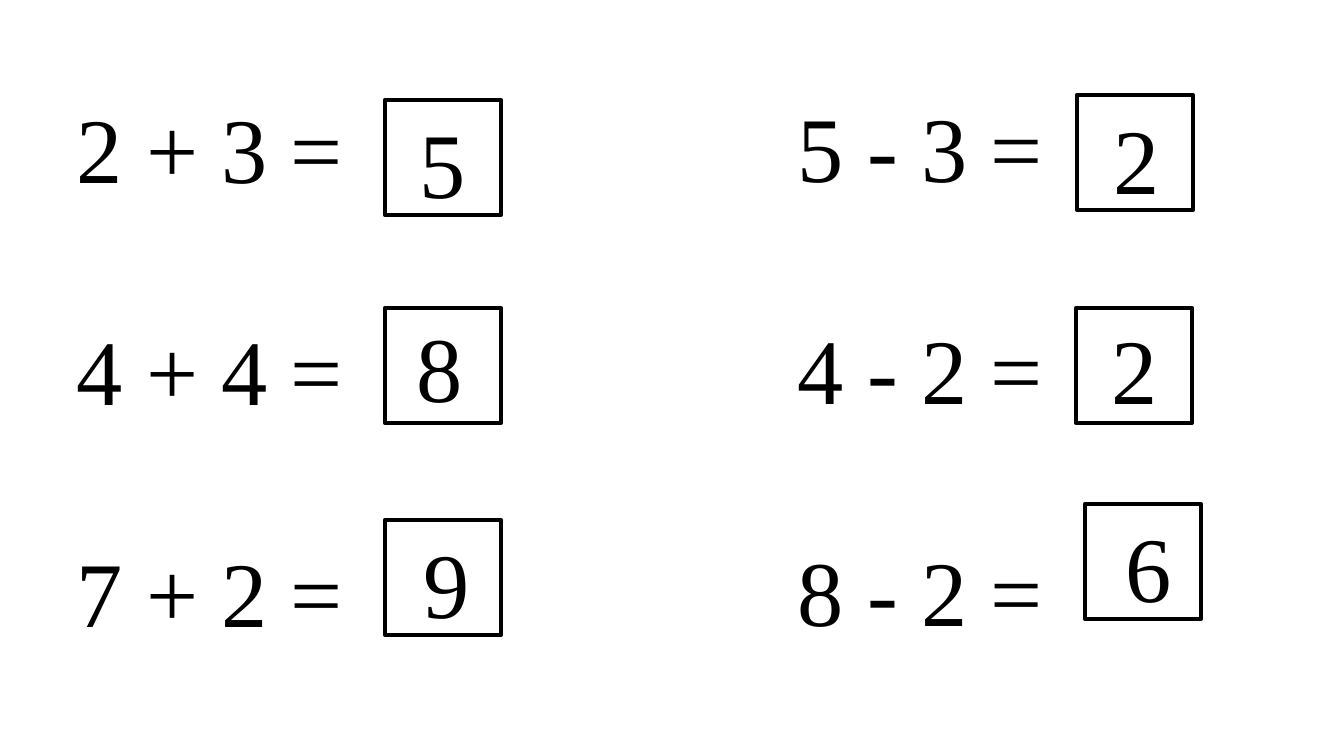
import pptx
import pptx.util
import pptx.dml.color
import pptx.enum.shapes
import pptx.enum.text

EMU_PER_PX = 914400 / 100.8
BOX_W, BOX_H = 116, 115
ANSWER_W, ANSWER_H = 109, 122
SUM_W, SUM_H = 318, 570

# equation list: left, top, lines
SUMS = [
    (67, 85, ["2 + 3 =", "4 + 4 =", "7 + 2 ="]),
    (788, 84, ["5 - 3 =", "4 - 2 =", "8 - 2 ="]),
]
# answer: digit, box left and top, digit left and top
ANSWERS = [
    ("5", (385, 100), (388, 100)),
    ("8", (385, 308), (385, 304)),
    ("9", (385, 520), (392, 520)),
    ("2", (1077, 95), (1082, 96)),
    ("2", (1076, 308), (1080, 306)),
    ("6", (1085, 504), (1094, 504)),
]


def px(n):
    return pptx.util.Emu(round(n * EMU_PER_PX))


def color(value):
    return pptx.dml.color.RGBColor.from_string(value)


def add_text(s, x, y, w, h, lines, size=66, font="Times New Roman",
             fill="000000", align="LEFT", line=80, gap=0):
    """Add a text box with one paragraph per line; line and gap are points."""
    tf = s.shapes.add_textbox(px(x), px(y), px(w), px(h)).text_frame
    tf.word_wrap = True
    for i, text in enumerate(lines):
        p = tf.add_paragraph() if i else tf.paragraphs[0]
        p.alignment = getattr(pptx.enum.text.PP_ALIGN, align)
        p.line_spacing = pptx.util.Pt(line)
        p.space_before = pptx.util.Pt(gap if i else 0)
        r = p.add_run()
        r.text = text
        r.font.name = font
        r.font.size = pptx.util.Pt(size)
        r.font.color.rgb = color(fill)


def add_box(s, x, y):
    sp = s.shapes.add_shape(pptx.enum.shapes.MSO_SHAPE.RECTANGLE,
                            px(x), px(y), px(BOX_W), px(BOX_H))
    sp.shadow.inherit = False
    sp.fill.background()
    sp.line.color.rgb = color("000000")
    sp.line.width = pptx.util.Pt(3)


def main():
    prs = pptx.Presentation()
    prs.slide_width, prs.slide_height = px(1344), px(756)
    s = prs.slides.add_slide(prs.slide_layouts[6])
    for x, y, lines in SUMS:
        add_text(s, x, y, SUM_W, SUM_H, lines, gap=78.5)
    for digit, box, place in ANSWERS:
        add_box(s, *box)
        add_text(s, *place, ANSWER_W, ANSWER_H, [digit], align="CENTER")
    prs.save("out.pptx")


if __name__ == "__main__":
    main()
